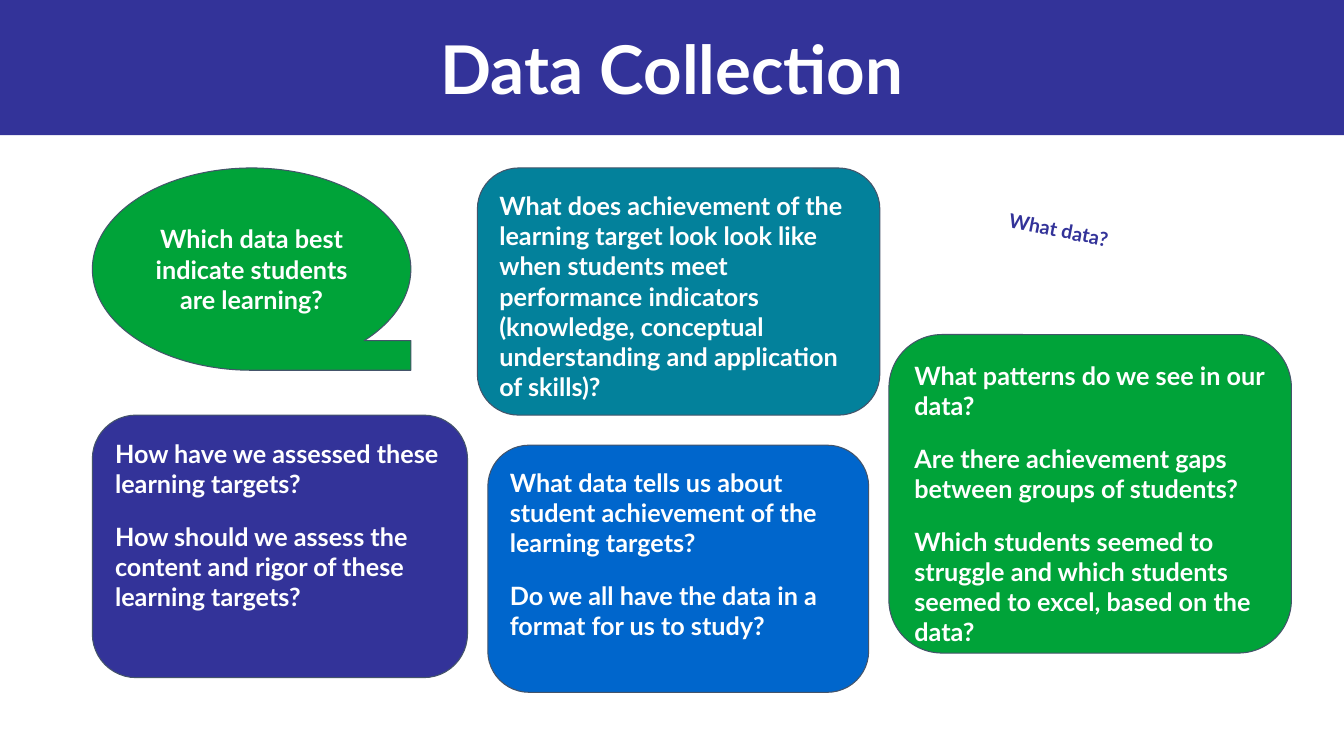
from pptx import Presentation
from pptx.dml.color import RGBColor
from pptx.enum import shapes, text
from pptx.util import Pt

INDIGO = RGBColor(0x33, 0x33, 0x99)
GREEN = RGBColor(0x00, 0xA3, 0x39)
BLUE = RGBColor(0x00, 0x66, 0xCC)
TEAL = RGBColor(0x03, 0x81, 0x9B)
SLATE = RGBColor(0x44, 0x54, 0x6A)
WHITE = RGBColor(0xFF, 0xFF, 0xFF)

WIDTH, HEIGHT = 960, 540
BAND_HEIGHT = 96.5
ROUND = shapes.MSO_SHAPE.ROUNDED_RECTANGLE
TAPE = shapes.MSO_SHAPE.FLOWCHART_SEQUENTIAL_ACCESS_STORAGE

QUESTIONS = [
    ((66, 296.5, 268, 187.5), INDIGO, [
        "How have we assessed these learning targets?",
        "How should we assess the content and rigor of these learning targets?"]),
    ((348.5, 318, 272, 176.5), BLUE, [
        "What data tells us about student achievement of the learning targets?",
        "Do we all have the data in a format for us to study?"]),
    ((341, 120, 287.5, 176.5), TEAL, [
        "What does achievement of the learning target look look like when students meet "
        "performance indicators (knowledge, conceptual understanding and application of skills)?"]),
    ((635, 239, 287.5, 227.5), GREEN, [
        "What patterns do we see in our data?",
        "Are there achievement gaps between groups of students?",
        "Which students seemed to struggle and which students seemed to excel, based on the data?"]),
]


def write(shape, paragraphs, size=18, color=WHITE, align=text.PP_ALIGN.LEFT,
          anchor=text.MSO_ANCHOR.TOP, after=0, inset=7.2):
    frame = shape.text_frame
    frame.word_wrap = True
    frame.auto_size = text.MSO_AUTO_SIZE.NONE
    frame.vertical_anchor = anchor
    frame.margin_left = frame.margin_right = Pt(7.2)
    frame.margin_top = frame.margin_bottom = Pt(inset)
    for index, wording in enumerate(paragraphs):
        paragraph = frame.paragraphs[0] if index == 0 else frame.add_paragraph()
        paragraph.alignment = align
        paragraph.space_before = Pt(0)
        paragraph.space_after = Pt(after)
        run = paragraph.add_run()
        run.text = wording
        run.font.name = "Lato"
        run.font.size = Pt(size)
        run.font.bold = True
        run.font.color.rgb = color


def add_filled(slide, preset, box, fill, outlined=True):
    shape = slide.shapes.add_shape(preset, *map(Pt, box))
    shape.shadow.inherit = False
    shape.fill.solid()
    shape.fill.fore_color.rgb = fill
    if outlined:
        shape.line.color.rgb = SLATE
        shape.line.width = Pt(0.75)
    else:
        shape.line.fill.background()
    return shape


def add_header(slide, box):
    add_filled(slide, shapes.MSO_SHAPE.RECTANGLE, box, INDIGO, outlined=False)
    heading = slide.shapes.title
    heading.element.getparent().append(heading.element)
    heading.left, heading.top, heading.width, heading.height = map(Pt, box)
    write(heading, ["Data Collection"], size=48, align=text.PP_ALIGN.CENTER,
          anchor=text.MSO_ANCHOR.MIDDLE, inset=3.6)


def add_question(slide, box, fill, paragraphs):
    write(add_filled(slide, ROUND, box, fill), paragraphs, after=16)


def add_opening(slide, box):
    write(add_filled(slide, TAPE, box, GREEN),
          ["Which data best indicate students are learning?"],
          align=text.PP_ALIGN.CENTER, anchor=text.MSO_ANCHOR.MIDDLE)


def add_aside(slide, box):
    aside = slide.shapes.add_textbox(*map(Pt, box))
    aside.rotation = 11.1
    write(aside, ["What data?"], size=14, color=INDIGO,
          align=text.PP_ALIGN.CENTER, inset=3.6)


def main():
    deck = Presentation()
    deck.slide_width, deck.slide_height = Pt(WIDTH), Pt(HEIGHT)
    slide = deck.slides.add_slide(deck.slide_layouts[5])
    add_header(slide, (0, 0, WIDTH, BAND_HEIGHT))
    add_opening(slide, (66, 120, 227.5, 144.5))
    for box, fill, paragraphs in QUESTIONS:
        add_question(slide, box, fill, paragraphs)
    add_aside(slide, (672.5, 152, 165.5, 34.5))
    deck.save("out.pptx")


if __name__ == "__main__":
    main()
